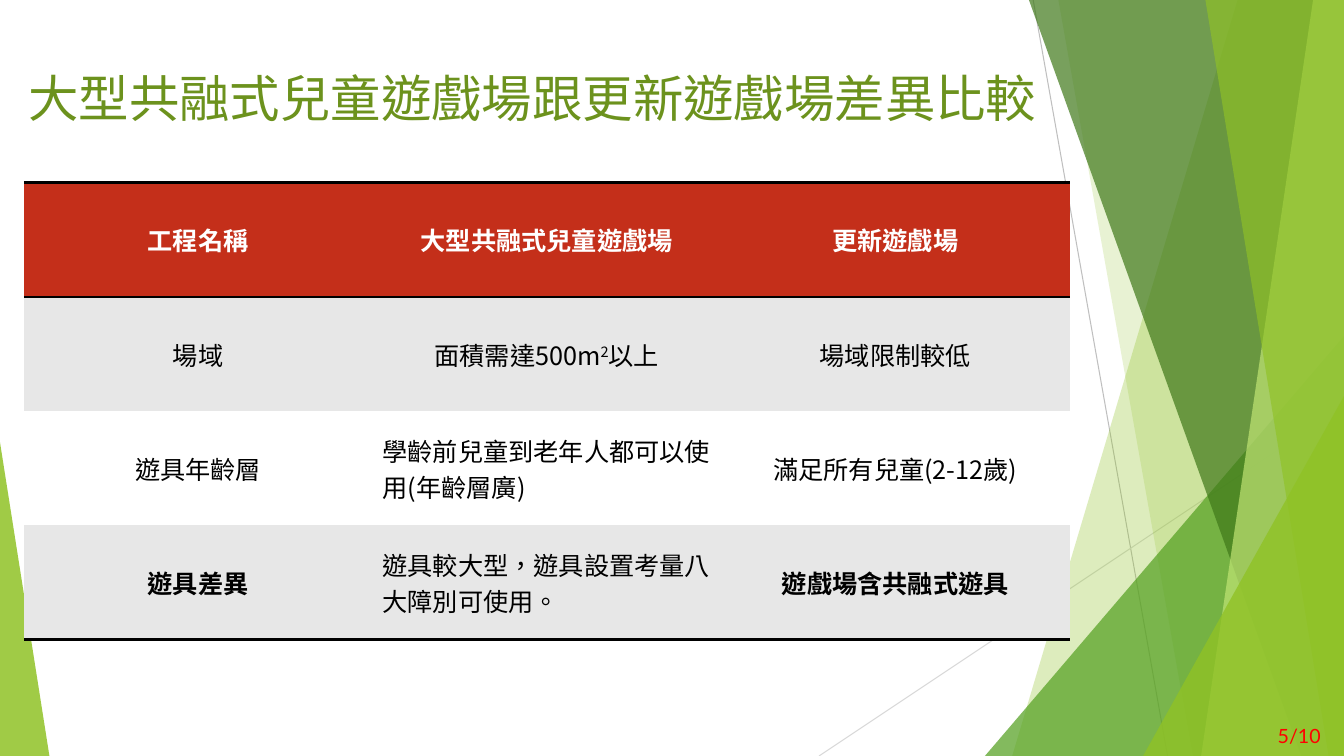
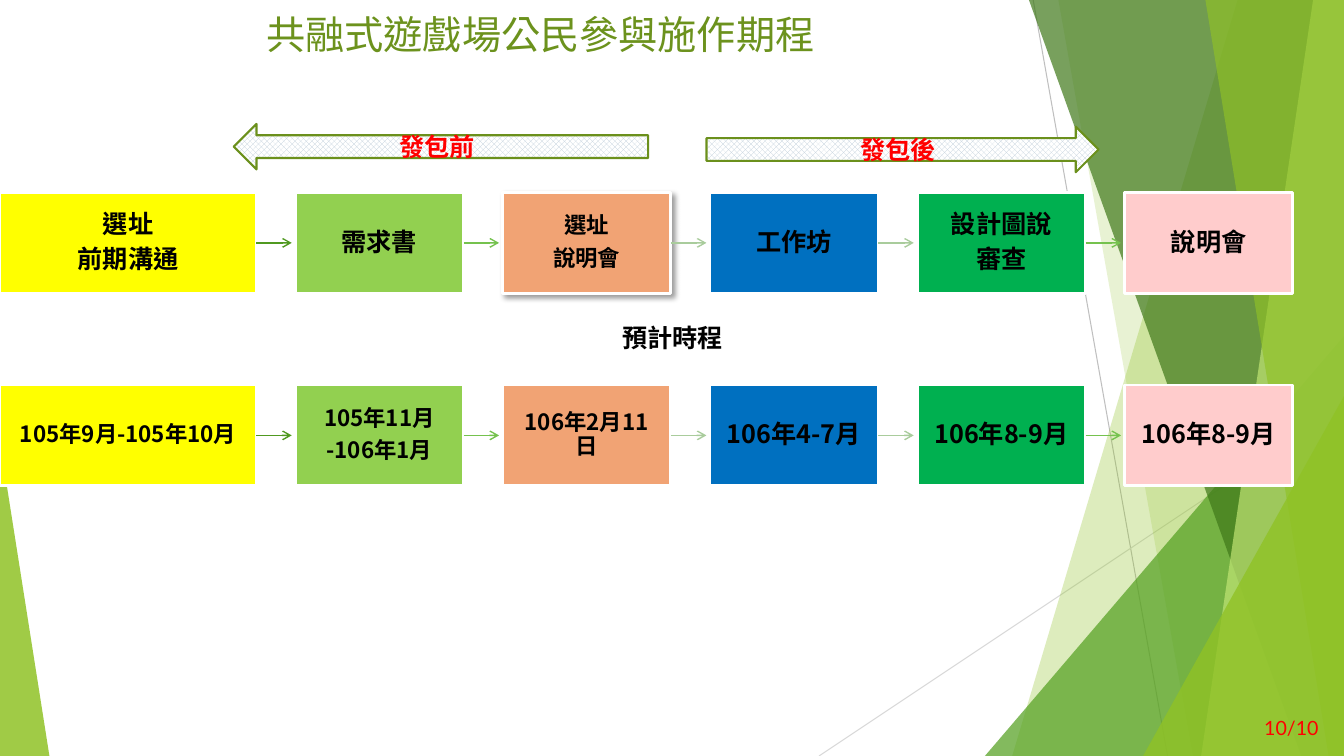
from lxml import etree
from pptx import Presentation
from pptx.dml.color import RGBColor
from pptx.enum.dml import MSO_PATTERN
from pptx.enum.shapes import MSO_CONNECTOR, MSO_SHAPE
from pptx.enum.text import MSO_ANCHOR, MSO_AUTO_SIZE, PP_ALIGN
from pptx.oxml.ns import qn
from pptx.util import Pt

LEFT, CENTER, RIGHT = PP_ALIGN.LEFT, PP_ALIGN.CENTER, PP_ALIGN.RIGHT
TOP, MIDDLE = MSO_ANCHOR.TOP, MSO_ANCHOR.MIDDLE
STRAIGHT = MSO_CONNECTOR.STRAIGHT
RECTANGLE, TRIANGLE = MSO_SHAPE.RECTANGLE, MSO_SHAPE.RIGHT_TRIANGLE
SLOPE = MSO_SHAPE.ISOSCELES_TRIANGLE
LEFT_ARROW, RIGHT_ARROW = MSO_SHAPE.LEFT_ARROW, MSO_SHAPE.RIGHT_ARROW
DIAMONDS = MSO_PATTERN.SOLID_DIAMOND

WIDTH, HEIGHT = 960, 540
HAN, LATIN = "Noto Sans CJK SC", "Lato"
BLACK, WHITE, RED = "000000", "FFFFFF", "FF0000"
TITLE_GREEN, ARROW_GREEN, ARROW_MESH = "6C921D", "6B901C", "BDCCD9"
LIME, GRASS, FOREST, PALE = "90C226", "54A021", "3F7819", "C0E474"
HEADER_RED, BAND_GRAY = "C42F1A", "E7E7E7"
NO_TABLE_STYLE = "{2D5ABB26-0587-4C30-8999-92F81FD0307C}"

STEP_WIDTHS = [183] + [120.2] * 5
STEP_GAP, STEP_HEIGHT = 27.9, 72
STEP_FILLS = ["FFFF00", "92D050", "F1A374", "0070C0", "00B050", "FFCCCC"]
LINK_COLORS = ["509920", "75C24E", "A9CC9C", "A9CC9C", "75C24E"]
STAGES = [
    (["選址", "前期溝通"], 18),
    (["需求書"], 18),
    (["選址", "說明會"], 16),
    (["工作坊"], 18),
    (["設計圖說", "審查"], 18),
    (["說明會"], 18),
]
DATES = [
    (["105年9月-105年10月"], 16),
    (["105年11月", "-106年1月"], 16),
    (["106年2月11日"], 16),
    (["106年4-7月"], 18),
    (["106年8-9月"], 18),
    (["106年8-9月"], 18),
]
COMPARISON = [
    ["工程名稱", "大型共融式兒童遊戲場", "更新遊戲場"],
    ["場域", "面積需達500m²以上", "場域限制較低"],
    ["遊具年齡層", "學齡前兒童到老年人都可以使用(年齡層廣)", "滿足所有兒童(2-12歲)"],
    ["遊具差異", "遊具較大型，遊具設置考量八大障別可使用。", "遊戲場含共融式遊具"],
]
BOLD_CELLS = {(0, 0), (0, 1), (0, 2), (3, 0), (3, 2)}
LEFT_CELLS = {(2, 1), (3, 1)}


def rgb(hex_color):
    return RGBColor.from_string(hex_color)


def add_xml(parent, tag, **attributes):
    return etree.SubElement(parent, qn(tag), attributes)


def add_run(paragraph, text, size, color, bold=False, font=HAN):
    run = paragraph.add_run()
    run.text = text
    run.font.name, run.font.size, run.font.bold = font, Pt(size), bold
    run.font.color.rgb = rgb(color)
    properties = run._r.get_or_add_rPr()
    properties.set("lang", "zh-TW")
    add_xml(properties, "a:ea", typeface=font)
    return properties


def paint(shape, color, opacity=100):
    shape.shadow.inherit = False
    shape.fill.solid()
    shape.fill.fore_color.rgb = rgb(color)
    shape.line.fill.background()
    if opacity < 100:
        tint = shape.element.spPr.find(qn("a:solidFill"))[0]
        add_xml(tint, "a:alpha", val=str(opacity * 1000))


def outline(shape, color, width):
    shape.line.color.rgb = rgb(color)
    shape.line.width = Pt(width)


def add_line(slide, start, end, color, width):
    line = slide.shapes.add_connector(STRAIGHT, *map(Pt, start + end))
    outline(line, color, width)
    add_xml(line.element.spPr, "a:effectLst")
    return line


def add_label(slide, box, text, align, size, color, bold=False, font=HAN, anchor=TOP):
    label = slide.shapes.add_textbox(*map(Pt, box))
    frame = label.text_frame
    frame.word_wrap, frame.vertical_anchor = True, anchor
    frame.paragraphs[0].alignment = align
    add_run(frame.paragraphs[0], text, size, color, bold, font)


def add_facet(slide, top_edge, bottom_edge, color, opacity):
    corners = [(WIDTH, 0), (WIDTH, HEIGHT), (bottom_edge, HEIGHT)]
    builder = slide.shapes.build_freeform(Pt(top_edge), 0)
    builder.add_line_segments([(Pt(x), Pt(y)) for x, y in corners])
    paint(builder.convert_to_shape(), color, opacity)


def add_slope(slide, left, top, width, peak, color, opacity):
    slope = slide.shapes.add_shape(SLOPE, Pt(left), Pt(top), Pt(width), Pt(HEIGHT - top))
    slope.adjustments[0] = peak
    paint(slope, color, opacity)


def add_backdrop(slide):
    add_line(slide, (738, 0), (834, HEIGHT), "BFBFBF", 0.75)
    add_line(slide, (WIDTH, 290), (585, HEIGHT), "D9D9D9", 0.75)
    add_facet(slide, 884, 723, LIME, 30)
    add_facet(slide, 756, 852, LIME, 20)
    add_slope(slide, 703.5, 240, 256.5, 1, GRASS, 72)
    add_facet(slide, 735, 929.5, FOREST, 70)
    add_facet(slide, 938, 858, PALE, 70)
    add_facet(slide, 861, 949, LIME, 65)
    add_slope(slide, 816.5, 283, 143.5, 1, LIME, 80)
    add_slope(slide, 0, 316, 35.3, 0, LIME, 85)


def move_to_layout(slide, layout):
    drawn = [shape for shape in slide.shapes if not shape.is_placeholder]
    for number, shape in enumerate(drawn, 100):
        shape.element.xpath(".//p:cNvPr")[0].set("id", str(number))
        layout.shapes.element.append(shape.element)


def add_title(slide, box, text, size, align):
    title = slide.shapes.title
    title.left, title.top, title.width, title.height = map(Pt, box)
    frame = title.text_frame
    frame.word_wrap, frame.vertical_anchor = True, TOP
    frame.auto_size = MSO_AUTO_SIZE.NONE
    frame.paragraphs[0].alignment = align
    add_run(frame.paragraphs[0], text, size, TITLE_GREEN)


def add_page_number(slide, left, top, text):
    add_label(slide, (left, top, 54, 29), text, RIGHT, 14, RED, font=LATIN, anchor=MIDDLE)


def add_border(cell, side):
    border = etree.Element(qn(side), w=str(Pt(2)))
    add_xml(add_xml(border, "a:solidFill"), "a:srgbClr", val=BLACK)
    cell._tc.get_or_add_tcPr().insert(0, border)


def fill_cell(cell, text, row, column):
    header = row == 0
    cell.vertical_anchor = MIDDLE
    cell.fill.solid()
    cell.fill.fore_color.rgb = rgb(HEADER_RED if header else BAND_GRAY if row % 2 else WHITE)
    paragraph = cell.text_frame.paragraphs[0]
    paragraph.alignment = LEFT if (row, column) in LEFT_CELLS else CENTER
    base, power, rest = text.partition("²")
    style = (18, WHITE if header else BLACK, (row, column) in BOLD_CELLS)
    add_run(paragraph, base, *style)
    if power:
        add_run(paragraph, "2", *style).set("baseline", "30000")
        add_run(paragraph, rest, *style)
    if header or row == len(COMPARISON) - 1:
        add_border(cell, "a:lnB")
    if header:
        add_border(cell, "a:lnT")


def add_comparison(slide, box):
    rows, columns = len(COMPARISON), len(COMPARISON[0])
    frame = slide.shapes.add_table(rows, columns, *map(Pt, box))
    table = frame.table
    frame.element.find(".//" + qn("a:tableStyleId")).text = NO_TABLE_STYLE
    for row, texts in enumerate(COMPARISON):
        for column, text in enumerate(texts):
            fill_cell(table.cell(row, column), text, row, column)


def add_phase(slide, kind, box, text):
    phase = slide.shapes.add_shape(kind, *map(Pt, box))
    phase.shadow.inherit = False
    phase.fill.patterned()
    phase.fill.pattern = DIAMONDS
    phase.fill.fore_color.rgb = rgb(ARROW_MESH)
    phase.fill.back_color.rgb = rgb(WHITE)
    outline(phase, ARROW_GREEN, 1.5)
    frame = phase.text_frame
    frame.vertical_anchor = MIDDLE
    frame.margin_left = Pt(110)
    frame.margin_top = frame.margin_bottom = frame.margin_right = 0
    frame.paragraphs[0].alignment = LEFT
    add_run(frame.paragraphs[0], text, 18, RED, True)


def add_step(slide, box, lines, size, color):
    step = slide.shapes.add_shape(RECTANGLE, *map(Pt, box))
    paint(step, color)
    outline(step, WHITE, 2)
    frame = step.text_frame
    frame.word_wrap, frame.vertical_anchor = True, MIDDLE
    inset = Pt(round(size * 0.56))
    frame.margin_left = frame.margin_right = inset
    frame.margin_top = frame.margin_bottom = inset
    for index, line in enumerate(lines):
        paragraph = frame.add_paragraph() if index else frame.paragraphs[0]
        paragraph.alignment, paragraph.line_spacing = CENTER, 0.9
        paragraph.space_after = Pt(round(size * 0.35))
        add_run(paragraph, line, size, BLACK, True)
    return step


def cast_shadow(shape):
    effects = shape.element.spPr.find(qn("a:effectLst"))
    shadow = add_xml(effects, "a:outerShdw", blurRad=str(Pt(4)), dist=str(Pt(3)),
                     dir=str(45 * 60000), algn="tl", rotWithShape="0")
    add_xml(add_xml(shadow, "a:srgbClr", val=BLACK), "a:alpha", val="40000")


def add_process(slide, left, top, steps):
    boxes = []
    for index, (lines, size) in enumerate(steps):
        width = STEP_WIDTHS[index]
        box = (left, top, width, STEP_HEIGHT)
        boxes.append(add_step(slide, box, lines, size, STEP_FILLS[index]))
        left += width
        if index < len(LINK_COLORS):
            middle = top + STEP_HEIGHT / 2
            tip = (left + STEP_GAP - 2.5, middle)
            link = add_line(slide, (left, middle), tip, LINK_COLORS[index], 1)
            link.begin_connect(boxes[-1], 3)
            add_xml(link.element.spPr.find(qn("a:ln")), "a:tailEnd", type="arrow")
        left += STEP_GAP
    return boxes


def build_comparison_slide(slide):
    add_title(slide, (13, 44, 783, 104), "大型共融式兒童遊戲場跟更新遊戲場差異比較", 36, LEFT)
    add_comparison(slide, (17, 130.5, 747, 326.5))
    add_page_number(slide, 896.5, 511, "5/10")


def build_schedule_slide(slide):
    add_title(slide, (47.5, 3.6, 677, 104), "共融式遊戲場公民參與施作期程", 28, CENTER)
    add_phase(slide, LEFT_ARROW, (167, 88.5, 296, 32.5), "發包前")
    add_phase(slide, RIGHT_ARROW, (504.7, 90.5, 280, 32.5), "發包後")
    stages = add_process(slide, 0, 137.5, STAGES)
    cast_shadow(stages[2])
    add_process(slide, 0, 275, DATES)
    add_label(slide, (214, 227, 533, 29), "預計時程", CENTER, 18, BLACK, True)
    add_page_number(slide, 895, 505, "10/10")


def main():
    deck = Presentation()
    deck.slide_width, deck.slide_height = Pt(WIDTH), Pt(HEIGHT)
    title_only = deck.slide_layouts[5]
    comparison = deck.slides.add_slide(title_only)
    add_backdrop(comparison)
    move_to_layout(comparison, title_only)
    build_comparison_slide(comparison)
    build_schedule_slide(deck.slides.add_slide(title_only))
    deck.save("out.pptx")


if __name__ == "__main__":
    main()
